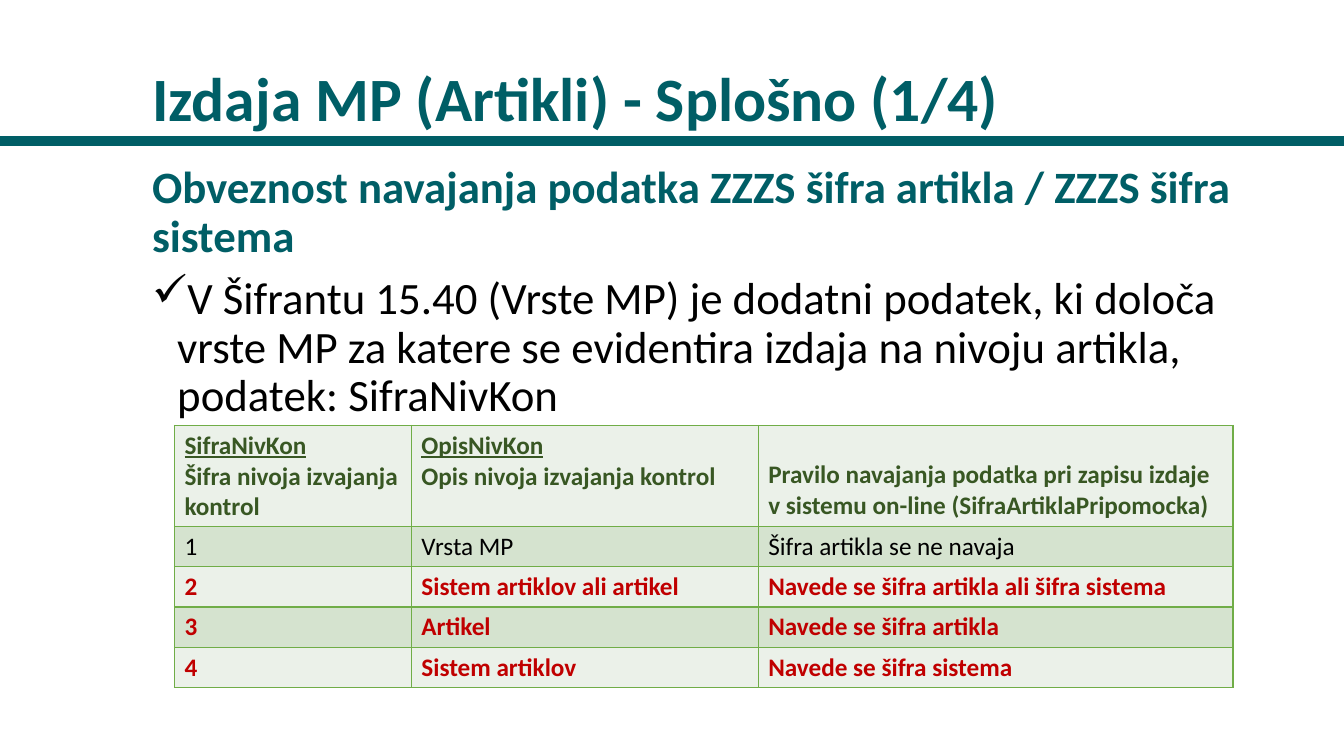
from dataclasses import dataclass

from lxml import etree
from pptx import Presentation
from pptx.dml.color import RGBColor
from pptx.enum.shapes import MSO_CONNECTOR
from pptx.enum.text import MSO_ANCHOR, MSO_AUTO_SIZE, PP_ALIGN
from pptx.oxml.ns import qn
from pptx.util import Inches, Pt

STRAIGHT = MSO_CONNECTOR.STRAIGHT
TOP, BOTTOM = MSO_ANCHOR.TOP, MSO_ANCHOR.BOTTOM
NO_AUTOFIT = MSO_AUTO_SIZE.NONE
LEFT = PP_ALIGN.LEFT


@dataclass(frozen=True)
class Theme:
    font: str = "Calibri"
    accent: str = "005E66"
    text: str = "000000"
    header: str = "385723"
    emphasis: str = "C00000"
    border: str = "70AD47"
    bands: tuple = ("EBF1E9", "D5E3CF")
    title_size: int = 44
    body_size: int = 32
    table_size: int = 18
    rule_width: int = 7
    border_width: int = 1


THEME = Theme()
SLIDE_WIDTH, SLIDE_HEIGHT = 13.33, 7.5

HEADINGS = [
    ["SifraNivKon", "Šifra nivoja izvajanja kontrol"],
    ["OpisNivKon", "Opis nivoja izvajanja kontrol"],
    ["Pravilo navajanja podatka pri zapisu izdaje v sistemu on-line (SifraArtiklaPripomocka)"],
]
LEVELS = [
    ("1", "Vrsta MP", "Šifra artikla se ne navaja"),
    ("2", "Sistem artiklov ali artikel", "Navede se šifra artikla ali šifra sistema"),
    ("3", "Artikel", "Navede se šifra artikla"),
    ("4", "Sistem artiklov", "Navede se šifra sistema"),
]


def format_runs(paragraph, size, color, bold):
    for run in paragraph.runs:
        run.font.name = THEME.font
        run.font.size = Pt(size)
        run.font.bold = bold
        run.font.color.rgb = RGBColor.from_string(color)


def add_check_bullet(paragraph, indent):
    properties = paragraph._p.get_or_add_pPr()
    properties.set("marL", str(Inches(indent)))
    properties.set("indent", str(-Inches(indent)))
    etree.SubElement(properties, qn("a:buChar")).set("char", "✓")


def add_rule(slide, left, top, width):
    rule = slide.shapes.add_connector(
        STRAIGHT, Inches(left), Inches(top), Inches(left + width), Inches(top))
    rule.line.color.rgb = RGBColor.from_string(THEME.accent)
    rule.line.width = Pt(THEME.rule_width)
    etree.SubElement(rule._element.spPr, qn("a:effectLst"))


def place_title(slide, left, top, width, height):
    title = slide.shapes.title
    title.left, title.top = Inches(left), Inches(top)
    title.width, title.height = Inches(width), Inches(height)
    frame = title.text_frame
    frame.text = "Izdaja MP (Artikli) - Splošno (1/4)"
    frame.word_wrap = True
    frame.auto_size = NO_AUTOFIT
    frame.vertical_anchor = BOTTOM
    heading = frame.paragraphs[0]
    heading.alignment = LEFT
    heading.line_spacing = 0.9
    format_runs(heading, THEME.title_size, THEME.accent, True)


def add_body(slide, left, top, width, height):
    body = slide.shapes.add_textbox(Inches(left), Inches(top), Inches(width), Inches(height))
    frame = body.text_frame
    frame.word_wrap = True
    obligation = frame.paragraphs[0]
    obligation.text = "Obveznost navajanja podatka ZZZS šifra artikla / ZZZS šifra sistema"
    obligation.line_spacing = 0.9
    format_runs(obligation, THEME.body_size, THEME.accent, True)

    explanation = frame.add_paragraph()
    explanation.text = (
        "V Šifrantu 15.40 (Vrste MP) je dodatni podatek, ki določa vrste MP "
        "za katere se evidentira izdaja na nivoju artikla, podatek: SifraNivKon")
    explanation.line_spacing = 0.9
    explanation.space_before = Pt(10)
    add_check_bullet(explanation, 0.25)
    format_runs(explanation, THEME.body_size, THEME.text, False)


def style_cell(cell, fill):
    properties = cell._tc.get_or_add_tcPr()
    for side in ("a:lnL", "a:lnR", "a:lnT", "a:lnB"):
        edge = etree.SubElement(properties, qn(side), w=str(Pt(THEME.border_width)))
        solid = etree.SubElement(edge, qn("a:solidFill"))
        etree.SubElement(solid, qn("a:srgbClr"), val=THEME.border)
    cell.fill.solid()
    cell.fill.fore_color.rgb = RGBColor.from_string(fill)


def add_levels_table(slide, left, top, width, height):
    column_widths = (2.35, 3.44, width - 2.35 - 3.44)
    level_height = 0.4
    header_height = height - level_height * len(LEVELS)
    table = slide.shapes.add_table(
        len(LEVELS) + 1, len(HEADINGS),
        Inches(left), Inches(top), Inches(width), Inches(height)).table
    table.horz_banding = False
    for column, column_width in zip(table.columns, column_widths):
        column.width = Inches(column_width)
    for index, row in enumerate(table.rows):
        row.height = Inches(level_height if index else header_height)
        for cell in row.cells:
            style_cell(cell, THEME.bands[index % 2])

    for cell, lines in zip(table.rows[0].cells, HEADINGS):
        cell.text_frame.text = "\n".join(lines)
        has_code = len(lines) > 1
        cell.vertical_anchor = TOP if has_code else BOTTOM
        for paragraph in cell.text_frame.paragraphs:
            format_runs(paragraph, THEME.table_size, THEME.header, True)
        if has_code:
            cell.text_frame.paragraphs[0].runs[0].font.underline = True

    for index, level in enumerate(LEVELS, start=1):
        needs_item = index > 1
        color = THEME.emphasis if needs_item else THEME.text
        for cell, value in zip(table.rows[index].cells, level):
            cell.text_frame.text = value
            format_runs(cell.text_frame.paragraphs[0], THEME.table_size, color, needs_item)


def main():
    presentation = Presentation()
    presentation.slide_width = Inches(SLIDE_WIDTH)
    presentation.slide_height = Inches(SLIDE_HEIGHT)
    slide = presentation.slides.add_slide(presentation.slide_layouts[5])
    add_rule(slide, 0, 1.4, SLIDE_WIDTH)
    place_title(slide, 1.41, 0.15, 11.01, 1.24)
    add_body(slide, 1.41, 1.59, 11.04, 5.74)
    add_levels_table(slide, 1.73, 4.22, 10.5, 2.6)
    presentation.save("out.pptx")


if __name__ == "__main__":
    main()
